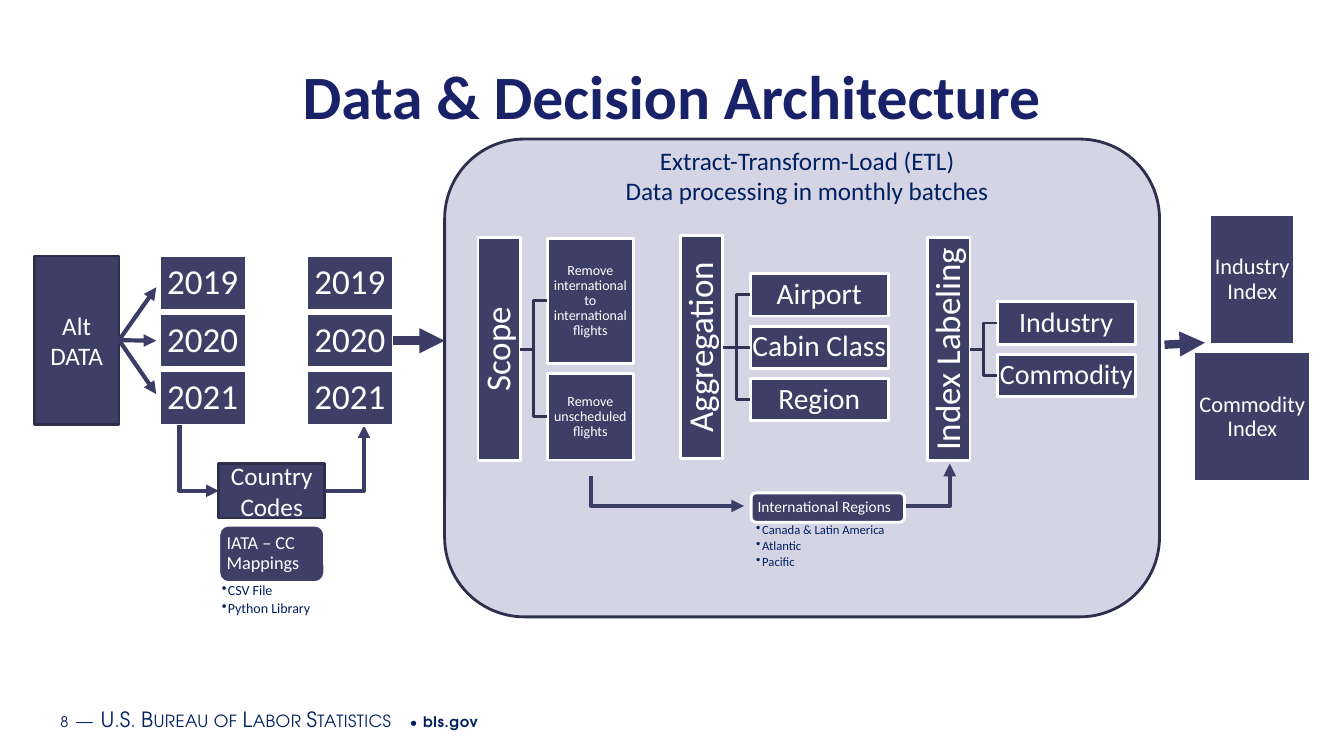
from lxml.etree import SubElement
from pptx import Presentation
from pptx.dml.color import RGBColor
from pptx.enum.shapes import MSO_CONNECTOR, MSO_SHAPE
from pptx.enum.text import MSO_ANCHOR, PP_ALIGN
from pptx.oxml.ns import qn
from pptx.util import Inches, Pt

COLORS = {
    "title": "192168", "navy": "002060", "box": "3E3F67", "edge": "2E2F4C",
    "arrow": "3C3D66", "bracket": "323252", "panel": "D4D4E5", "white": "FFFFFF",
}
YEARS = ["2019", "2020", "2021"]
FONT, FOOTER_FONT = "Calibri", "TeX Gyre Adventor"


def rgb(name):
    return RGBColor.from_string(COLORS[name])


def add_run(paragraph, text, size, color, bold=False, font=FONT):
    run = paragraph.add_run()
    run.text = text
    run.font.size, run.font.name, run.font.bold = Pt(size), font, bold
    run.font.color.rgb = rgb(color)
    return run


def write(frame, lines, size, color, align=PP_ALIGN.CENTER, anchor=MSO_ANCHOR.MIDDLE,
          inset=None, spacing=None, bold=False):
    frame.word_wrap = True
    frame.vertical_anchor = anchor
    if inset is not None:
        frame.margin_left = frame.margin_right = Inches(inset)
        frame.margin_top = frame.margin_bottom = Inches(inset)
    for index, line in enumerate(lines):
        paragraph = frame.paragraphs[0] if index == 0 else frame.add_paragraph()
        paragraph.alignment = align
        if spacing:
            paragraph.line_spacing = spacing
        add_run(paragraph, line, size, color, bold)


def text_area(slide, left, top, width, height):
    return slide.shapes.add_textbox(
        Inches(left), Inches(top), Inches(width), Inches(height)).text_frame


def box(slide, left, top, width, height, lines=(), size=18, edge="white", fill="box",
        kind=MSO_SHAPE.RECTANGLE, **text_options):
    shape = slide.shapes.add_shape(
        kind, Inches(left), Inches(top), Inches(width), Inches(height))
    shape.shadow.inherit = False
    shape.fill.solid()
    shape.fill.fore_color.rgb = rgb(fill)
    shape.line.color.rgb = rgb(edge)
    shape.line.width = Pt(2)
    write(shape.text_frame, lines, size, "white", **text_options)
    return shape


def link(slide, start, end, width=3, color="arrow", kind=MSO_CONNECTOR.STRAIGHT, arrow="tailEnd"):
    """Connect two points; arrow is headEnd (at start), tailEnd (at end) or None."""
    connector = slide.shapes.add_connector(kind, *(Inches(v) for v in (*start, *end)))
    connector.line.color.rgb = rgb(color)
    connector.line.width = Pt(width)
    if arrow:
        SubElement(connector.line._get_or_add_ln(), qn("a:" + arrow), type="triangle")
    SubElement(connector._element.spPr, qn("a:effectLst"))
    return connector


def corner_link(slide, start, end, arrow="tailEnd"):
    """One bend: horizontal from start, then vertical to end."""
    connector = link(slide, start, end, kind=MSO_CONNECTOR.ELBOW, arrow=arrow)
    connector._element.spPr.find(qn("a:prstGeom")).set("prst", "bentConnector2")


def bullets(slide, left, top, width, height, items, size, inset):
    frame = text_area(slide, left, top, width, height)
    for index, item in enumerate(items):
        paragraph = frame.paragraphs[0] if index == 0 else frame.add_paragraph()
        properties = paragraph._p.get_or_add_pPr()
        properties.set("marL", str(Inches(0.06)))
        properties.set("indent", str(-Inches(0.06)))
        SubElement(properties, qn("a:buChar"), char="•")
        paragraph.line_spacing = 0.9
        paragraph.space_after = Pt(0.2 * size)
        add_run(paragraph, item, size, "navy")
    frame.word_wrap = True
    frame.margin_left, frame.margin_right = Inches(inset), Inches(0.1)
    frame.margin_top = frame.margin_bottom = Inches(0.02)


def year_stack(slide, left):
    return [box(slide, left, 2.54 + 0.57 * row, 0.86, 0.54, [year], 25,
                inset=0.07, spacing=0.9) for row, year in enumerate(YEARS)]


def step_tree(slide, step, left, top, width, leaves, size):
    """Vertical step label with leaves (text, height) centred beside it."""
    gap, label_height = 0.1, 2.21
    label = box(slide, left, top, 0.42, label_height, [step], 25, inset=0.02, spacing=0.9)
    label.text_frame._txBody.bodyPr.set("vert", "vert270")
    middle = top + label_height / 2
    leaf_top = middle - (sum(h for _, h in leaves) + gap * (len(leaves) - 1)) / 2
    for text, height in leaves:
        leaf = box(slide, left + 0.69, leaf_top, width, height, [text], size,
                   inset=0.01, spacing=0.9)
        leaf_middle = leaf_top + height / 2
        level = abs(leaf_middle - middle) < 0.01
        bracket = link(slide, (left + 0.42, middle), (left + 0.69, leaf_middle), 2, "bracket",
                       MSO_CONNECTOR.STRAIGHT if level else MSO_CONNECTOR.ELBOW, None)
        bracket.begin_connect(label, 3)
        bracket.end_connect(leaf, 1)
        leaf_top += height + gap


def footer(slide):
    frame = text_area(slide, 0.53, 6.93, 8.47, 0.4)
    frame.word_wrap = True
    frame.vertical_anchor = MSO_ANCHOR.MIDDLE
    frame.margin_left = frame.margin_right = Inches(0.07)
    frame.margin_top = frame.margin_bottom = Inches(0.04)
    parts = [("8", 10.5, 50, False), (" ", 16, 50, False), ("—", 15, 30, True),
             (" ", 16, 50, False), ("U.S. Bureau of Labor Statistics", 15, 30, True),
             (" • ", 10.5, 50, False), ("bls.gov", 10.5, 50, False)]
    for text, size, tracking, small_caps in parts:
        run = add_run(frame.paragraphs[0], text, size, "navy", text == "bls.gov", FOOTER_FONT)
        properties = run._r.get_or_add_rPr()
        properties.set("spc", str(tracking))
        if small_caps:
            properties.set("cap", "small")


def main():
    deck = Presentation()
    deck.slide_width, deck.slide_height = Inches(13.33), Inches(7.5)
    slide = deck.slides.add_slide(deck.slide_layouts[6])

    # Footer and title
    footer(slide)
    write(text_area(slide, 0.54, 0.5, 12.25, 0.88), ["Data & Decision Architecture"],
          44, "title", bold=True)

    # Raw data split by year
    alt_data = box(slide, 0.34, 2.54, 0.84, 1.67, ["Alt", "DATA"], edge="edge")
    for target in (2.85, 3.38, 3.91):
        link(slide, (1.18, 3.38), (1.55, target)).begin_connect(alt_data, 3)
    year_stack(slide, 1.58)

    # Country code lookup
    corner_link(slide, (2.17, 4.87), (1.78, 4.22), "headEnd")
    box(slide, 2.17, 4.6, 1.05, 0.54, ["Country", "Codes"], edge="edge")
    box(slide, 2.17, 5.21, 1.05, 0.57, ["IATA – CC Mappings"], 13, inset=0.05, spacing=0.9,
        kind=MSO_SHAPE.ROUNDED_RECTANGLE, align=PP_ALIGN.LEFT)
    bullets(slide, 2.17, 5.77, 1.05, 0.38, ["CSV File", "Python Library"], 10, 0.03)
    corner_link(slide, (3.22, 4.87), (3.61, 4.22))
    coded_years = year_stack(slide, 3.04)
    link(slide, (3.9, 3.38), (4.41, 3.38), 6).begin_connect(coded_years[1], 3)

    # ETL panel
    box(slide, 4.41, 1.38, 7.09, 4.74, edge="edge", fill="panel",
        kind=MSO_SHAPE.ROUNDED_RECTANGLE)
    write(text_area(slide, 5.88, 1.39, 4.25, 0.71),
          ["Extract-Transform-Load (ETL)", "Data processing in monthly batches"],
          18, "navy", anchor=MSO_ANCHOR.TOP)
    step_tree(slide, "Scope", 4.74, 2.36, 0.85,
              [("Remove international to international flights", 1.24),
               ("Remove unscheduled flights", 0.86)], 10)
    step_tree(slide, "Aggregation", 6.75, 2.34, 1.37,
              [(text, 0.42) for text in ("Airport", "Cabin Class", "Region")], 21)
    step_tree(slide, "Index Labeling", 9.2, 2.36, 1.37,
              [(text, 0.42) for text in ("Industry", "Commodity")], 20)

    # International regions
    corner_link(slide, (7.38, 5.02), (5.86, 4.72), "headEnd")
    box(slide, 7.45, 4.89, 1.52, 0.29, ["International Regions"], 11, inset=0.05, spacing=0.9,
        kind=MSO_SHAPE.ROUNDED_RECTANGLE, align=PP_ALIGN.LEFT)
    bullets(slide, 7.45, 5.17, 1.52, 0.54,
            ["Canada & Latin America", "Atlantic", "Pacific"], 9, 0.05)
    corner_link(slide, (8.99, 5.02), (9.42, 4.6))

    # Resulting indexes
    link(slide, (11.55, 3.42), (11.95, 3.4), 6)
    box(slide, 12, 2.13, 0.84, 1.29, ["Industry Index"], 16, inset=0.04, spacing=0.9)
    box(slide, 11.84, 3.49, 1.16, 1.29, ["Commodity Index"], 16, inset=0.04, spacing=0.9)

    deck.save("out.pptx")


if __name__ == "__main__":
    main()
